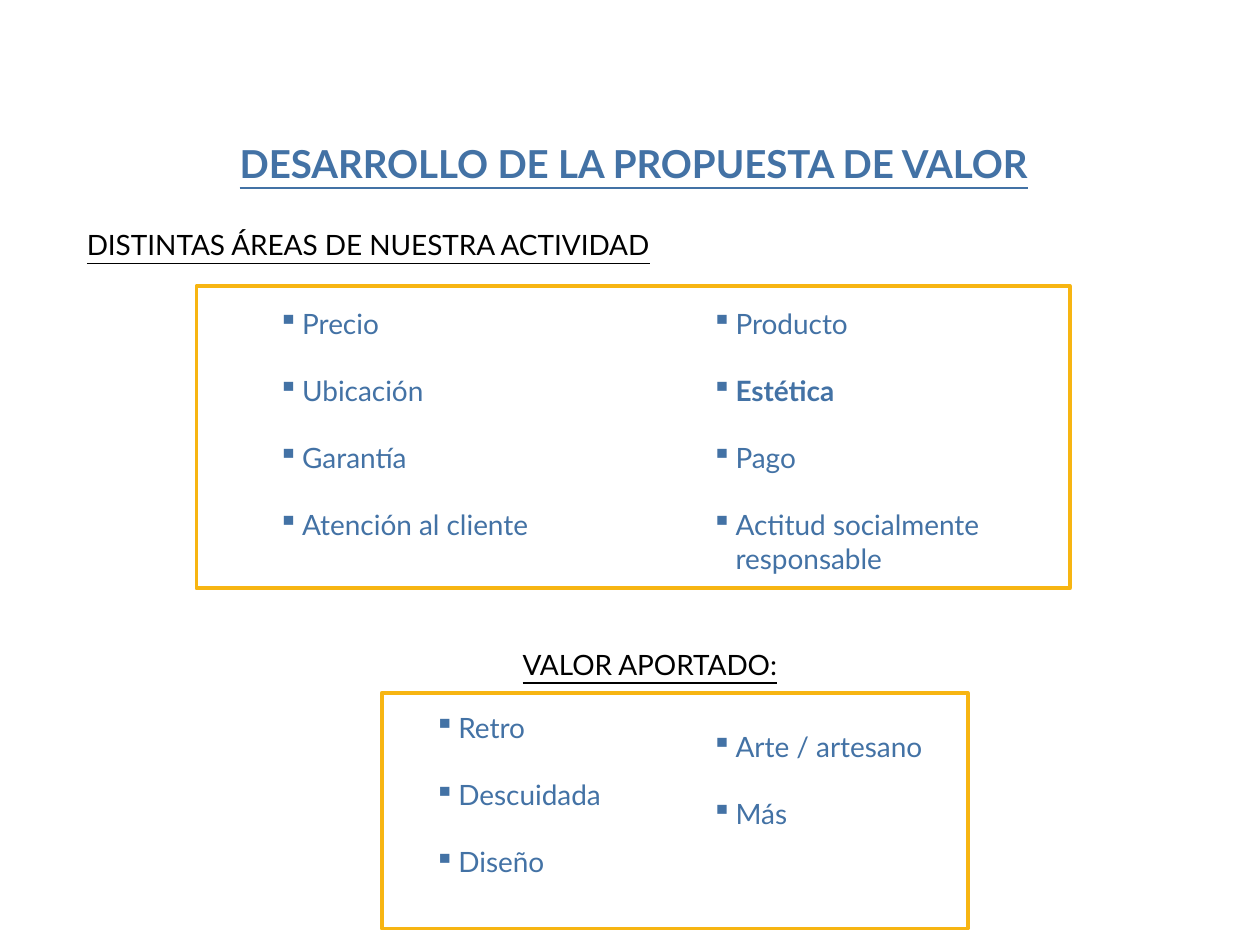
from lxml import etree
from pptx import Presentation
from pptx.dml.color import RGBColor
from pptx.enum.shapes import MSO_SHAPE
from pptx.enum.text import MSO_ANCHOR, MSO_AUTO_SIZE, PP_ALIGN
from pptx.oxml.ns import qn
from pptx.util import Inches, Pt

FONT = "Lato"
BLUE, GOLD, BLACK = "4372A5", "F7B512", "000000"
LINE_GAP = 19.2  # one line of 16 pt text, in points


def rgb(hex_color):
    return RGBColor.from_string(hex_color)


def add_run(p, text, size, color, bold=False, underline=False):
    r = p.add_run()
    r.text = text
    font = r.font
    font.name, font.size = FONT, Pt(size)
    font.bold, font.underline = bold, underline
    font.color.rgb = rgb(color)


def set_bullet(p):
    """Hang the paragraph on a small blue square."""
    pPr = p._p.get_or_add_pPr()
    pPr.set("marL", str(Inches(0.19)))
    pPr.set("indent", str(-Inches(0.19)))
    bu_clr = etree.SubElement(pPr, qn("a:buClr"))
    etree.SubElement(bu_clr, qn("a:srgbClr"), val=BLUE)
    etree.SubElement(pPr, qn("a:buChar"), char="▪")


def add_text_frame(s, x, y, w, h):
    tf = s.shapes.add_textbox(Inches(x), Inches(y), Inches(w), Inches(h)).text_frame
    tf.word_wrap = True
    return tf


def add_title(s, text, x, y, w, h):
    title = s.shapes.title
    title.left, title.top = Inches(x), Inches(y)
    title.width, title.height = Inches(w), Inches(h)
    tf = title.text_frame
    tf.auto_size = MSO_AUTO_SIZE.NONE
    tf.vertical_anchor = MSO_ANCHOR.TOP
    p = tf.paragraphs[0]
    p.alignment = PP_ALIGN.CENTER
    add_run(p, text, 22, BLUE, bold=True, underline=True)


def add_heading(s, text, x, y, w, h=0.37):
    tf = add_text_frame(s, x, y, w, h)
    add_run(tf.paragraphs[0], text, 16, BLACK, underline=True)


def add_list(s, items, x, y, w, h, strong=()):
    tf = add_text_frame(s, x, y, w, h)
    for i, item in enumerate(items):
        p = tf.add_paragraph() if i else tf.paragraphs[0]
        if i:
            p.space_before = Pt(LINE_GAP)
        set_bullet(p)
        add_run(p, item, 16, BLUE, bold=item in strong)


def add_frame(s, x, y, w, h):
    sp = s.shapes.add_shape(MSO_SHAPE.RECTANGLE, Inches(x), Inches(y), Inches(w), Inches(h))
    sp.shadow.inherit = False
    sp.fill.background()
    sp.line.color.rgb = rgb(GOLD)
    sp.line.width = Pt(2.25)


def add_activity_areas(s, x, y, w, h):
    add_heading(s, "DISTINTAS ÁREAS DE NUESTRA ACTIVIDAD", x - 0.97, y - 0.51, 5.92)
    add_frame(s, x, y, w, h)
    add_list(s, ["Precio", "Ubicación", "Garantía", "Atención al cliente"],
             x + 0.55, y + 0.11, 2.89, h - 0.15)
    add_list(s, ["Producto", "Estética", "Pago", "Actitud socialmente responsable"],
             x + 3.99, y + 0.11, 2.7, h - 0.15, strong=["Estética"])


def add_value(s, x, y, w, h):
    add_heading(s, "VALOR APORTADO:", x + 1.02, y - 0.41, 3.8)
    add_frame(s, x, y, w, h)
    add_list(s, ["Retro", "Descuidada", "Diseño"], x + 0.32, y + 0.09, 2.1, h - 0.3)
    add_list(s, ["Arte / artesano", "Más"], x + 2.52, y + 0.24, 1.89, h - 0.9)


def main():
    prs = Presentation()
    prs.slide_width, prs.slide_height = Inches(10), Inches(7.5)
    s = prs.slides.add_slide(prs.slide_layouts[5])
    add_title(s, "DESARROLLO DE LA PROPUESTA DE VALOR", 0.5, 1.06, 9.06, 0.63)
    add_activity_areas(s, 1.56, 2.27, 6.93, 2.4)
    add_value(s, 3.03, 5.5, 4.65, 1.87)
    prs.save("out.pptx")


if __name__ == "__main__":
    main()
